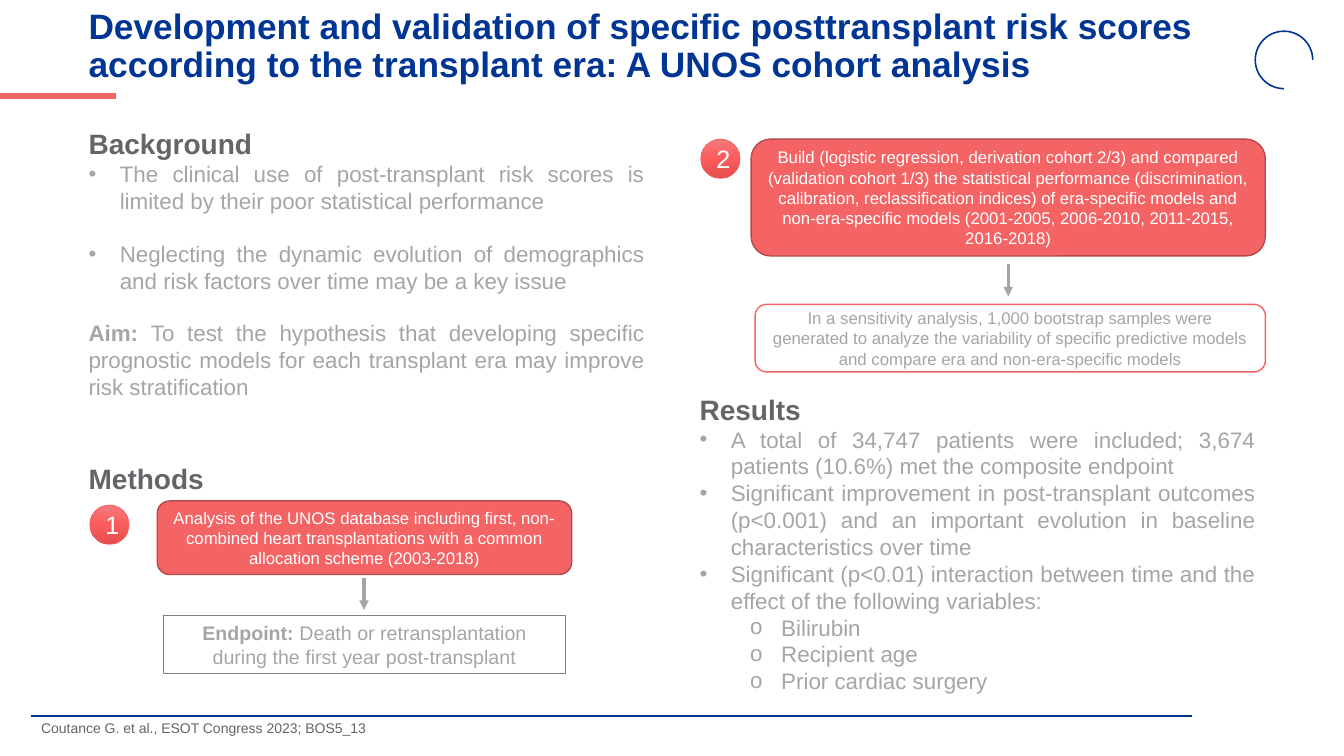
"""Build the slide on era-specific posttransplant risk scores."""
from copy import deepcopy

from pptx import Presentation
from pptx.dml.color import RGBColor
from pptx.enum.shapes import MSO_CONNECTOR, MSO_SHAPE
from pptx.enum.text import MSO_ANCHOR, PP_ALIGN
from pptx.oxml.ns import qn
from pptx.util import Emu, Pt
from lxml.etree import SubElement

PX = 9144
NAVY = RGBColor(0x00, 0x35, 0x94)
CORAL = RGBColor(0xF4, 0x64, 0x65)
BRICK = RGBColor(0xB5, 0x4A, 0x4B)
SLATE = RGBColor(0x63, 0x65, 0x69)
GREY = RGBColor(0xA5, 0xA5, 0xA5)
DARK_GREY = RGBColor(0x7F, 0x7F, 0x7F)
WHITE = RGBColor(0xFF, 0xFF, 0xFF)
BADGE_STOPS = [
    (0, RGBColor(0xF7, 0x79, 0x7A)),
    (0.5, RGBColor(0xFB, 0x5D, 0x5E)),
    (1, RGBColor(0xE5, 0x4D, 0x4E)),
]

LEFT, CENTER, JUSTIFY = PP_ALIGN.LEFT, PP_ALIGN.CENTER, PP_ALIGN.JUSTIFY
FORMATS = {
    "title": (25.2, NAVY, {"alignment": LEFT, "line_spacing": 0.9}),
    "footer": (10, SLATE, {"alignment": LEFT, "line_spacing": 0.9}),
    "heading": (20, SLATE, {"alignment": LEFT}),
    "body": (16, GREY, {"alignment": JUSTIFY}),
    "spaced body": (16, GREY, {"alignment": JUSTIFY, "space_before": Pt(18.4)}),
    "bullet": (16, GREY, {"alignment": JUSTIFY}),
    "spaced bullet": (16, GREY, {"alignment": JUSTIFY, "space_before": Pt(18.4)}),
    "sub-bullet": (16, GREY, {"alignment": JUSTIFY, "level": 1}),
    "step": (12, WHITE, {"alignment": CENTER}),
    "outcome": (12, GREY, {"alignment": CENTER}),
    "endpoint": (14, GREY, {"alignment": CENTER}),
    "badge": (18, WHITE, {"alignment": CENTER}),
}
BULLETS = {"bullet": ("•", 31), "spaced bullet": ("•", 31), "sub-bullet": ("o", 81)}
HANGING = 31

prs = Presentation()
prs.slide_width, prs.slide_height = Emu(1333 * PX), Emu(750 * PX)
slide = prs.slides.add_slide(prs.slide_layouts[6])
shapes = slide.shapes


def write(shape, paragraphs, anchor=MSO_ANCHOR.TOP):
    """Fill a shape with (format, bold text, plain text) paragraphs."""
    frame = shape.text_frame
    frame.word_wrap = True
    frame.vertical_anchor = anchor
    for index, (kind, bold_text, plain_text) in enumerate(paragraphs):
        paragraph = frame.add_paragraph() if index else frame.paragraphs[0]
        size, color, settings = FORMATS[kind]
        for name, value in settings.items():
            setattr(paragraph, name, value)
        if kind in BULLETS:
            mark, indent = BULLETS[kind]
            properties = paragraph._p.get_or_add_pPr()
            properties.set("marL", str(indent * PX))
            properties.set("indent", str(-HANGING * PX))
            SubElement(properties, qn("a:buFont")).set("typeface", "Arial")
            SubElement(properties, qn("a:buChar")).set("char", mark)
        for text, bold in ((bold_text, True), (plain_text, False)):
            if text:
                run = paragraph.add_run()
                run.text = text
                run.font.color.rgb = color
                for name, value in {"name": "Arial", "size": Pt(size), "bold": bold}.items():
                    setattr(run.font, name, value)


def add_outlined(preset, box, fill, line, width):
    """Add a preset shape without shadow."""
    shape = shapes.add_shape(preset, *(Emu(n * PX) for n in box))
    shape.shadow.inherit = False
    if fill is None:
        shape.fill.background()
    else:
        shape.fill.solid()
        shape.fill.fore_color.rgb = fill
    shape.line.color.rgb = line
    shape.line.width = Pt(width)
    return shape


for x1, y1, x2, y2, color, width, has_head in [
    (0, 95, 115, 95, CORAL, 4.5, False),
    (31, 710, 1182, 710, NAVY, 1.5, False),
    (1000, 262, 1000, 294, GREY, 2.25, True),
    (361, 573, 361, 605, GREY, 2.25, True),
]:
    connector = shapes.add_connector(
        MSO_CONNECTOR.STRAIGHT, *(Emu(n * PX) for n in (x1, y1, x2, y2))
    )
    connector.line.color.rgb = color
    connector.line.width = Pt(width)
    if has_head:
        SubElement(connector.line._get_or_add_ln(), qn("a:tailEnd")).set("type", "triangle")
    SubElement(connector._element.spPr, qn("a:effectLst"))

for box, anchor, paragraphs in [
    ((78, 15, 1150, 64), MSO_ANCHOR.MIDDLE, [
        ("title", "Development and validation of specific posttransplant risk scores "
                  "according to the transplant era: A UNOS cohort analysis", ""),
    ]),
    ((31, 711, 784, 34), MSO_ANCHOR.TOP, [
        ("footer", "", "Coutance G. et al., ESOT Congress 2023; BOS5_13"),
    ]),
    ((78, 121, 571, 286), MSO_ANCHOR.TOP, [
        ("heading", "Background", ""),
        ("bullet", "", "The clinical use of post-transplant risk scores is limited by "
                       "their poor statistical performance"),
        ("spaced bullet", "", "Neglecting the dynamic evolution of demographics and risk "
                              "factors over time may be a key issue"),
        ("spaced body", "Aim: ", "To test the hypothesis that developing specific prognostic "
                                 "models for each transplant era may improve risk stratification"),
    ]),
    ((78, 453, 581, 44), MSO_ANCHOR.TOP, [("heading", "Methods", "")]),
    ((684, 384, 571, 313), MSO_ANCHOR.TOP, [
        ("heading", "Results", ""),
        ("bullet", "", "A total of 34,747 patients were included; 3,674 patients (10.6%) "
                       "met the composite endpoint"),
        ("bullet", "", "Significant improvement in post-transplant outcomes (p<0.001) and "
                       "an important evolution in baseline characteristics over time"),
        ("bullet", "", "Significant (p<0.01) interaction between time and the effect of "
                       "the following variables:"),
        ("sub-bullet", "", "Bilirubin"),
        ("sub-bullet", "", "Recipient age"),
        ("sub-bullet", "", "Prior cardiac surgery"),
    ]),
]:
    write(shapes.add_textbox(*(Emu(n * PX) for n in box)), paragraphs, anchor)

ROUNDED = MSO_SHAPE.ROUNDED_RECTANGLE
for preset, box, fill, line, width, paragraph in [
    (ROUNDED, (745, 138, 510, 116), CORAL, BRICK, 1,
     ("step", "", "Build (logistic regression, derivation cohort 2/3) and compared "
                  "(validation cohort 1/3) the statistical performance (discrimination, "
                  "calibration, reclassification indices) of era-specific models and "
                  "non-era-specific models (2001-2005, 2006-2010, 2011-2015, 2016-2018)")),
    (ROUNDED, (749, 302, 506, 67), WHITE, CORAL, 1,
     ("outcome", "", "In a sensitivity analysis, 1,000 bootstrap samples were generated to "
                     "analyze the variability of specific predictive models and compare era "
                     "and non-era-specific models")),
    (ROUNDED, (156, 497, 411, 73), CORAL, BRICK, 1,
     ("step", "", "Analysis of the UNOS database including first, non-combined heart "
                  "transplantations with a common allocation scheme (2003-2018)")),
    (MSO_SHAPE.RECTANGLE, (162, 611, 399, 57), None, DARK_GREY, 0.75,
     ("endpoint", "Endpoint: ", "Death or retransplantation during the first year "
                                "post-transplant")),
]:
    write(add_outlined(preset, box, fill, line, width), [paragraph], MSO_ANCHOR.MIDDLE)

for number, left, top in [("1", 89, 501), ("2", 695, 138)]:
    badge = add_outlined(MSO_SHAPE.OVAL, (left, top, 39, 39), CORAL, CORAL, 0.5)
    badge.fill.gradient()
    badge.fill.gradient_angle = 270
    first_stop = badge._element.xpath(".//a:gsLst/a:gs")[0]
    first_stop.addnext(deepcopy(first_stop))
    for stop, (position, color) in zip(badge.fill.gradient_stops, BADGE_STOPS):
        stop.position = position
        stop.color.rgb = color
    write(badge, [("badge", "", number)], MSO_ANCHOR.MIDDLE)

corner_arc = add_outlined(MSO_SHAPE.ARC, (1245, 31, 57, 57), None, NAVY, 1.13)
corner_arc.adjustments[0] = 54
corner_arc.adjustments[1] = 0

prs.save("out.pptx")
